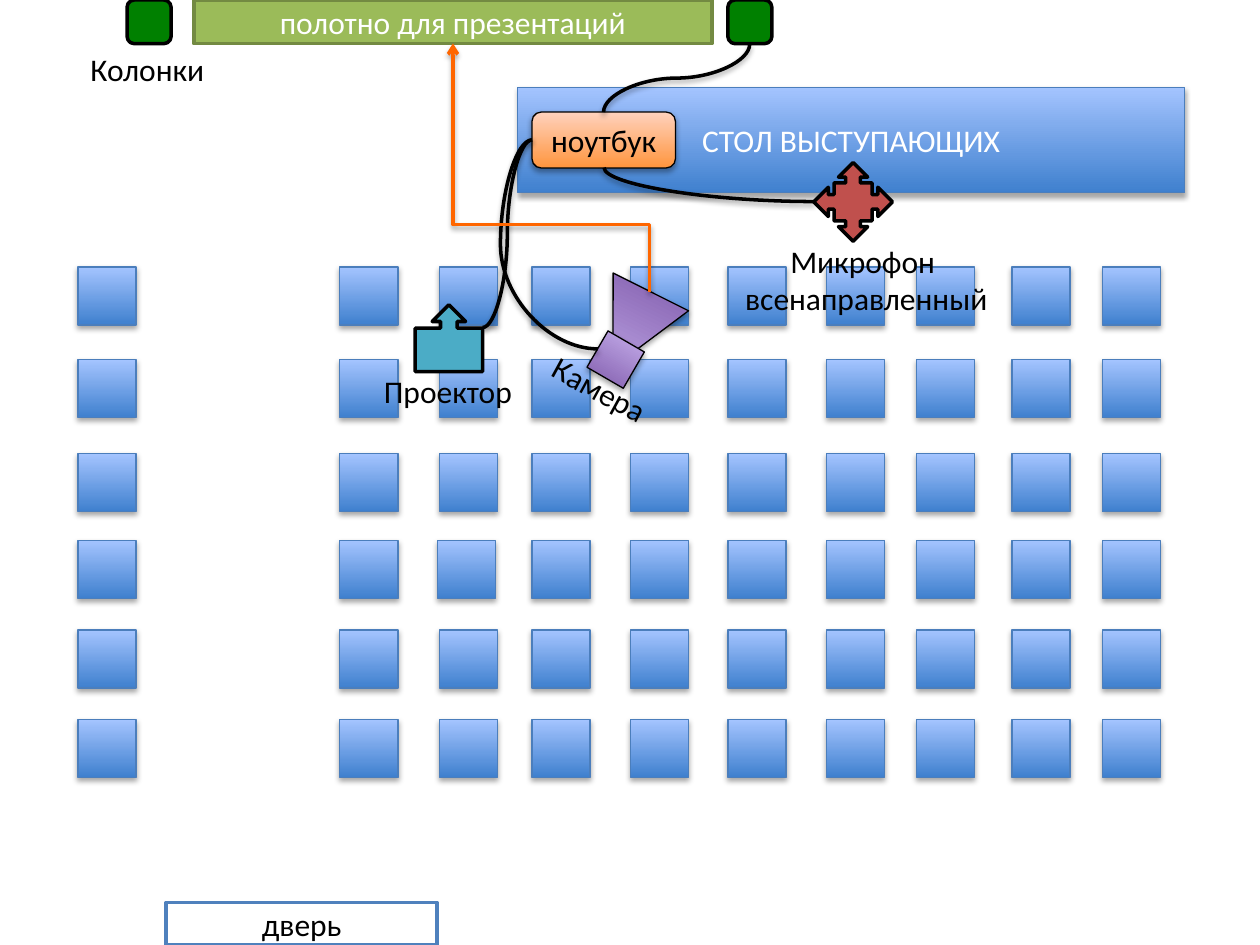
from copy import deepcopy

from lxml import etree
from pptx import Presentation
from pptx.dml.color import RGBColor
from pptx.enum.shapes import MSO_CONNECTOR, MSO_SHAPE
from pptx.enum.text import MSO_ANCHOR, MSO_AUTO_SIZE, PP_ALIGN
from pptx.oxml import parse_xml
from pptx.oxml.ns import qn
from pptx.util import Pt

RECT, ROUNDED = MSO_SHAPE.RECTANGLE, MSO_SHAPE.ROUNDED_RECTANGLE
TRIANGLE = MSO_SHAPE.FLOWCHART_EXTRACT
FOUR_WAY, UP_CALLOUT = MSO_SHAPE.QUAD_ARROW_CALLOUT, MSO_SHAPE.UP_ARROW_CALLOUT
CURVE, ELBOW = MSO_CONNECTOR.CURVE, MSO_CONNECTOR.ELBOW
LEFT, CENTER = PP_ALIGN.LEFT, PP_ALIGN.CENTER
MIDDLE, TOP = MSO_ANCHOR.MIDDLE, MSO_ANCHOR.TOP
GROW = MSO_AUTO_SIZE.SHAPE_TO_FIT_TEXT

# Pairs of colours are gradients from bottom to top
THEME = {
    "font": "Calibri", "size": 18, "thin": 0.75, "thick": 2,
    "black": "000000", "white": "FFFFFF",
    "blue": ("3F80CE", "A4C4FF"), "blue_line": "4B7EBC",
    "orange": ("FF953E", "FFD2BD"), "purple": ("7F5BAB", "C8B0ED"),
    "door_line": "4F81BD", "screen": "9BBB59", "screen_line": "738A42",
    "microphone": "C0504D", "projector": "4BACC6", "speaker": "008000",
    "beam": "FF6600",
}
SHADOW = parse_xml(
    '<a:outerShdw xmlns:a="http://schemas.openxmlformats.org/drawingml/2006/main"'
    ' blurRad="40000" dist="23000" dir="5400000" rotWithShape="0">'
    '<a:srgbClr val="000000"><a:alpha val="35000"/></a:srgbClr></a:outerShdw>')

prs = Presentation()
prs.slide_width, prs.slide_height = Pt(720), Pt(540)
slide = prs.slides.add_slide(prs.slide_layouts[6])


def write(frame, text, color="black", align=CENTER, anchor=MIDDLE, wrap=True):
    frame.word_wrap = wrap
    frame.vertical_anchor = anchor
    frame.text = text
    for paragraph in frame.paragraphs:
        paragraph.alignment = align
        font = paragraph.runs[0].font
        font.name, font.size = THEME["font"], Pt(THEME["size"])
        font.color.rgb = RGBColor.from_string(THEME[color])


def add_part(kind, left, top, width, height, fill, line="black", weight="thick", turn=0):
    part = slide.shapes.add_shape(kind, Pt(left), Pt(top), Pt(width), Pt(height))
    part.rotation = turn
    part.line.color.rgb = RGBColor.from_string(THEME[line])
    part.line.width = Pt(THEME[weight])
    part.shadow.inherit = False
    colors = THEME[fill]
    if isinstance(colors, tuple):
        part.fill.gradient()
        part.fill.gradient_angle = 90
        for stop, color in zip(part.fill.gradient_stops, colors):
            stop.color.rgb = RGBColor.from_string(color)
        part._element.spPr.find(qn("a:effectLst")).append(deepcopy(SHADOW))
    else:
        part.fill.solid()
        part.fill.fore_color.rgb = RGBColor.from_string(colors)
    return part


# Speakers' table
table = add_part(RECT, 295.8, 49.9, 381.2, 60.3, "blue", "blue_line", "thin")
write(table.text_frame, "СТОЛ ВЫСТУПАЮЩИХ", color="white")

# Seats, with one slightly out of line
seat_columns = [44.6, 194.2, 251.2, 304, 360.4, 416, 472.3, 523.6, 578.2, 629.8]
seat_rows = [152.5, 205.5, 259.2, 308.7, 360, 411.1]
for row, top in enumerate(seat_rows):
    for column, left in enumerate(seat_columns):
        nudge = -1.3 if (row, column) == (3, 2) else 0
        add_part(RECT, left + nudge, top, 33.2, 33.2, "blue", "blue_line", "thin")

# Door, screen and laptop
door = add_part(RECT, 95, 515.7, 154.8, 24.3, "white", "door_line")
write(door.text_frame, "дверь")
screen = add_part(RECT, 110.8, 0, 296, 25, "screen", "screen_line")
write(screen.text_frame, "полотно для презентаций", color="white")
laptop = add_part(ROUNDED, 304, 64, 82, 32, "orange", weight="thin")
write(laptop.text_frame, "ноутбук")

# Labels of the equipment: text, left, top, width, height, turn, alignment
labels = [
    ("Камера", 306.7, 208.1, 72.7, 29.1, 28.6, LEFT),
    ("Микрофон \nвсенаправленный", 417.6, 134.6, 154.8, 50.9, 0, CENTER),
    ("Проектор", 211.7, 208.8, 88.6, 29.1, 0, CENTER),
    ("Колонки", 44.6, 25.2, 80.6, 29.1, 0, LEFT),
]
for text, left, top, width, height, turn, align in labels:
    label = slide.shapes.add_textbox(Pt(left), Pt(top), Pt(width), Pt(height))
    label.rotation = turn
    write(label.text_frame, text, align=align, anchor=TOP, wrap=False)
    label.text_frame.auto_size = GROW

# Camera and microphone
add_part(TRIANGLE, 337, 164.2, 48.2, 48.2, "purple", weight="thin", turn=206.6)
add_part(RECT, 339.8, 193.5, 24, 24, "purple", weight="thin", turn=30.1)
add_part(FOUR_WAY, 465, 92.9, 45, 45, "microphone")

# Cables and projector beam, given before turning:
# kind, start x, start y, end x, end y, turn, preset, bend, colour
cables = [
    (CURVE, 275.8, 187.2, 304, 80, 0, "curvedConnector3", 0.5, "black"),
    (CURVE, 415, 45.4, 395.6, 165.6, 270, "curvedConnector2", None, "black"),
    (CURVE, 341.6, 199.4, 304, 80, 180, "curvedConnector3", -0.48, "black"),
    (CURVE, 367.2, 2.9, 406.1, 86.4, 90, "curvedConnector3", 0.5, "black"),
    (ELBOW, 244.1, 151.9, 385.9, 39.6, 270, "bentConnector3", 0.27, "beam"),
]
for kind, x1, y1, x2, y2, turn, preset, bend, color in cables:
    cable = slide.shapes.add_connector(kind, Pt(x1), Pt(y1), Pt(x2), Pt(y2))
    cable.line.color.rgb = RGBColor.from_string(THEME[color])
    cable.line.width = Pt(THEME["thick"])
    properties = cable._element.spPr
    properties.find(qn("a:xfrm")).set("rot", str(turn * 60000))
    geometry = properties.find(qn("a:prstGeom"))
    geometry.set("prst", preset)
    if bend is not None:
        guides = geometry.find(qn("a:avLst"))
        etree.SubElement(guides, qn("a:gd"), name="adj1", fmla=f"val {round(bend * 100000)}")
    if color == "beam":
        etree.SubElement(properties.find(qn("a:ln")), qn("a:tailEnd"), type="arrow")
    effects = etree.SubElement(properties, qn("a:effectLst"))
    effects.append(deepcopy(SHADOW))

# Projector and loudspeakers
add_part(UP_CALLOUT, 237.3, 174.2, 38.5, 38.2, "projector")
for left in (72.6, 415.9):
    add_part(ROUNDED, left, 0, 25.2, 25, "speaker")

prs.save("out.pptx")
